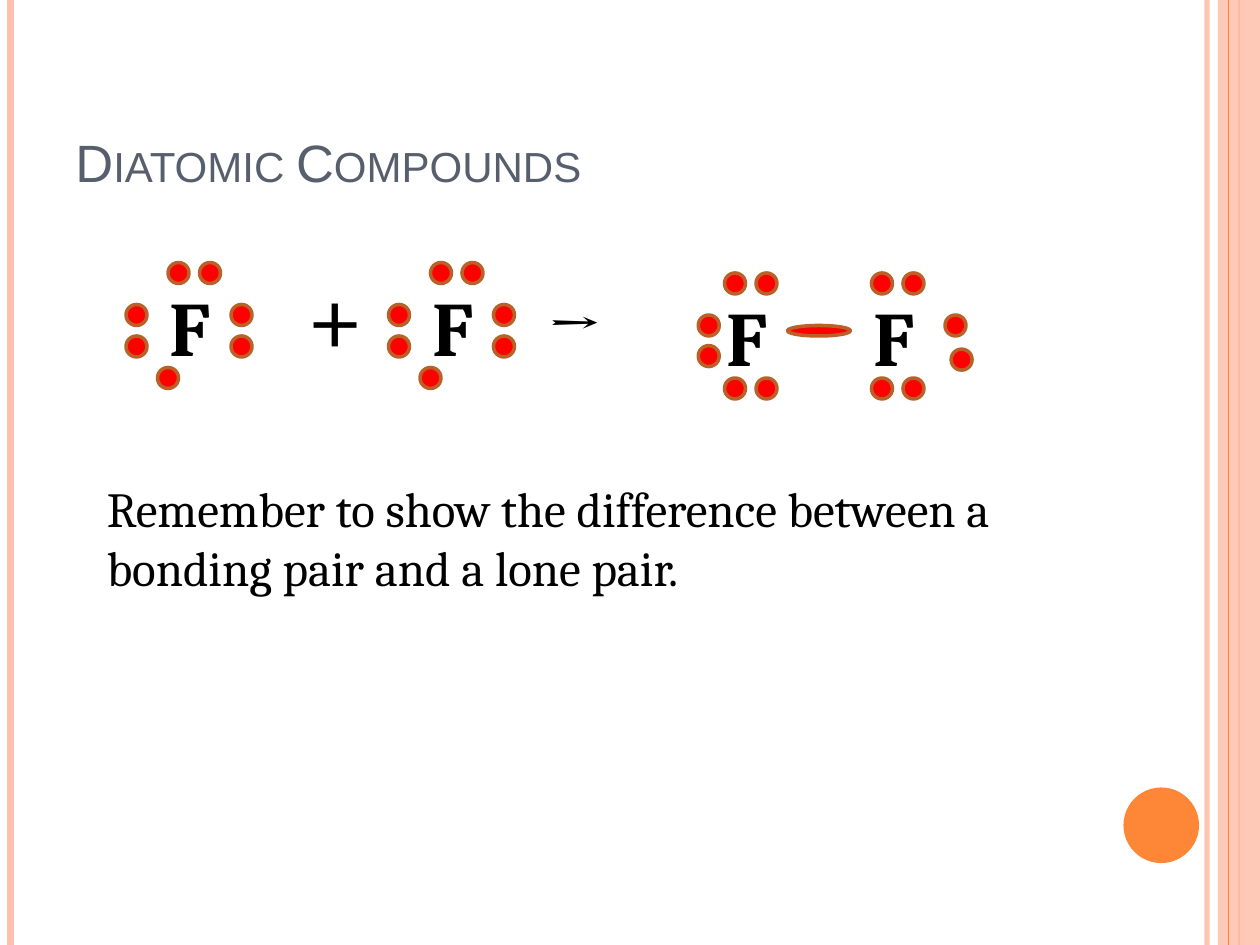
from dataclasses import dataclass

from lxml import etree
from pptx import Presentation
from pptx import util as u
from pptx.dml import color
from pptx.enum import shapes, text
from pptx.oxml import ns

PEACH, ORANGE, RED, BROWN = "FEC2AC", "FE8637", "FF0000", "B96128"
BLACK, SLATE = "000000", "575F6D"
WIDTH, HEIGHT = 720, 540
DOT = 12


@dataclass
class Rule:
    left: float
    hue: str
    weight: float
    opacity: int = 100


@dataclass
class Label:
    words: str
    left: float
    top: float
    width: float
    height: float
    size: float
    font: str = "Cambria"
    hue: str = BLACK
    bold: bool = False
    small_caps: bool = False
    anchor: text.MSO_ANCHOR = text.MSO_ANCHOR.TOP


@dataclass
class Atom:
    left: float
    top: float
    electrons: list[tuple[float, float]]


TOP_PAIR = [(6, -6), (24, -6)]
BOTTOM_PAIR = [(6, 54), (24, 54)]
FREE = TOP_PAIR + [(-18, 18), (-18, 36), (42, 18), (42, 36), (0, 54)]
BONDED = TOP_PAIR + BOTTOM_PAIR

RULES = [
    Rule(689.75, PEACH, 3, 93),
    Rule(6, PEACH, 4.5),
    Rule(708, ORANGE, 1.5),
]
INNER_RULE = Rule(702, ORANGE, 0.75)
LABELS = [
    Label("Diatomic Compounds", 36, 24, 588, 90, 30, "Arial", SLATE,
          small_caps=True, anchor=text.MSO_ANCHOR.BOTTOM),
    Label("+", 168, 139.5, 48, 80, 60),
    Label("→", 306, 156, 54, 55.5, 40),
    Label("Remember to show the difference between a bonding pair and a lone pair.",
          54, 270, 606, 75, 28),
]
ATOMS = [
    Atom(90, 156, FREE),
    Atom(240, 156, FREE),
    Atom(408, 162, BONDED + [(-9, 18), (-9, 35.5)]),
    Atom(492, 162, BONDED + [(48, 18), (51.5, 37.5)]),
]


def rgb(code: str) -> color.RGBColor:
    return color.RGBColor.from_string(code)


def assign(target, values: dict) -> None:
    for name, value in values.items():
        setattr(target, name, value)


def fade(holder, opacity: int) -> None:
    if opacity < 100:
        tint = holder.find(".//" + ns.qn("a:srgbClr"))
        etree.SubElement(tint, ns.qn("a:alpha"), val=str(opacity * 1000))


def draw_rule(page, rule: Rule) -> None:
    line = page.shapes.add_connector(
        shapes.MSO_CONNECTOR.STRAIGHT,
        u.Pt(rule.left), u.Pt(0), u.Pt(rule.left), u.Pt(HEIGHT))
    line.line.width = u.Pt(rule.weight)
    line.line.color.rgb = rgb(rule.hue)
    fade(line.line._get_or_add_ln(), rule.opacity)
    etree.SubElement(line._element.spPr, ns.qn("a:effectLst"))


def draw_shape(page, kind: shapes.MSO_SHAPE, left: float, top: float, width: float,
               height: float, fill: str, outline: str = "", opacity: int = 100) -> None:
    shape = page.shapes.add_shape(
        kind, u.Pt(left), u.Pt(top), u.Pt(width), u.Pt(height))
    shape.shadow.inherit = False
    shape.fill.solid()
    shape.fill.fore_color.rgb = rgb(fill)
    fade(shape._element.spPr, opacity)
    if outline:
        shape.line.color.rgb = rgb(outline)
        shape.line.width = u.Pt(2)
    else:
        shape.line.fill.background()


def draw_label(page, label: Label) -> None:
    box = page.shapes.add_textbox(
        u.Pt(label.left), u.Pt(label.top), u.Pt(label.width), u.Pt(label.height))
    assign(box.text_frame, {"word_wrap": True, "vertical_anchor": label.anchor})
    para = box.text_frame.paragraphs[0]
    span = para.add_run()
    span.text = label.words
    assign(span.font, {"name": label.font, "size": u.Pt(label.size), "bold": label.bold})
    span.font.color.rgb = rgb(label.hue)
    if label.small_caps:
        span._r.get_or_add_rPr().set("cap", "small")


def draw_atom(page, atom: Atom) -> None:
    draw_label(page, Label("F", atom.left, atom.top, 48, 60.5, 44, bold=True))
    for across, down in atom.electrons:
        draw_shape(page, shapes.MSO_SHAPE.OVAL, atom.left + across, atom.top + down,
                   DOT, DOT, RED, BROWN)


def main() -> None:
    deck = Presentation()
    assign(deck, {"slide_width": u.Pt(WIDTH), "slide_height": u.Pt(HEIGHT)})
    page = deck.slides.add_slide(deck.slide_layouts[6])
    for rule in RULES:
        draw_rule(page, rule)
    draw_shape(page, shapes.MSO_SHAPE.RECTANGLE, 696, 0, 24, HEIGHT, PEACH, opacity=87)
    draw_rule(page, INNER_RULE)
    draw_shape(page, shapes.MSO_SHAPE.OVAL, 642, 450, 43.2, 43.2, ORANGE)
    for label in LABELS:
        draw_label(page, label)
    for atom in ATOMS:
        draw_atom(page, atom)
    draw_shape(page, shapes.MSO_SHAPE.OVAL, 450, 186, 36, 6, RED, BROWN)
    deck.save("out.pptx")


if __name__ == "__main__":
    main()
